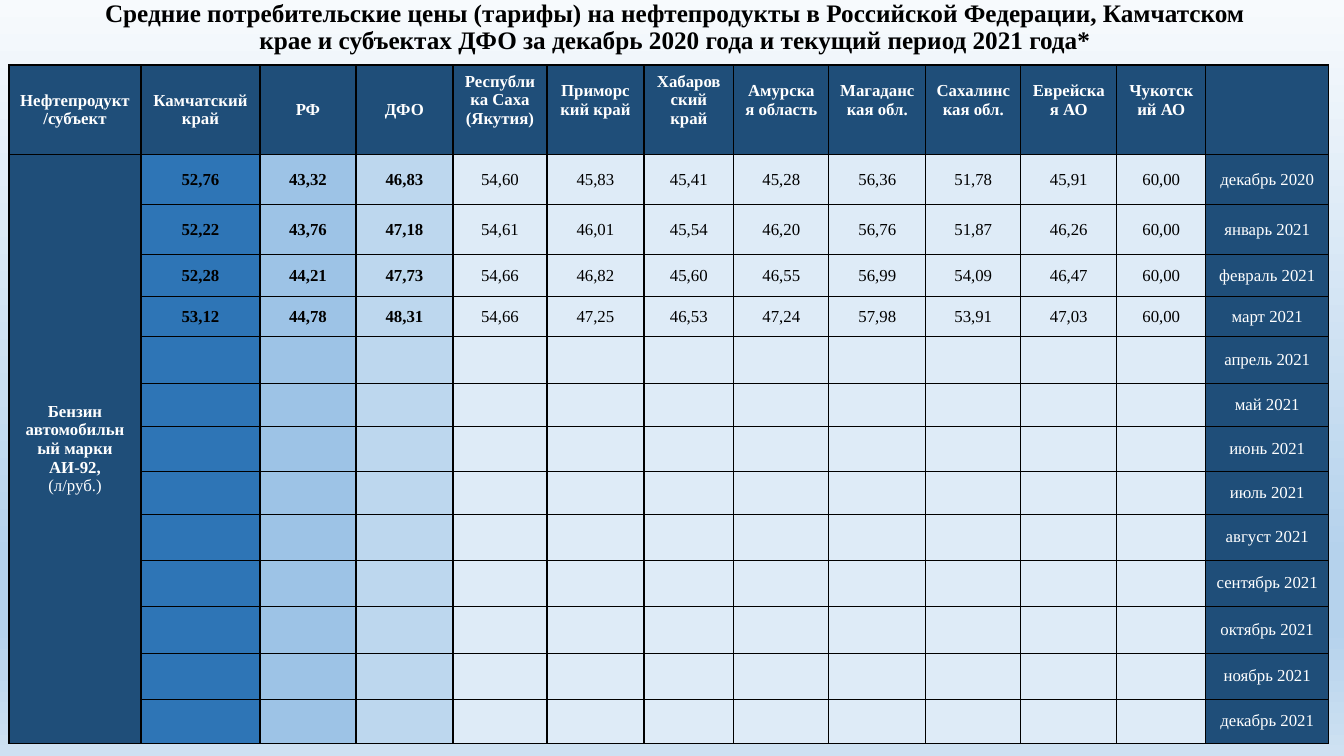
"""Build the slide with fuel prices across the Far Eastern regions."""
from lxml.etree import SubElement
from pptx import Presentation
from pptx.dml.color import RGBColor
from pptx.enum.text import MSO_ANCHOR as Anchor, PP_ALIGN as Align
from pptx.oxml import parse_xml
from pptx.oxml.ns import nsdecls, qn
from pptx.util import Pt

PX = 914400 / 100.8
BLACK = RGBColor(0x00, 0x00, 0x00)
WHITE = RGBColor(0xFF, 0xFF, 0xFF)
NAVY = RGBColor(0x1F, 0x4E, 0x79)
BLUE = RGBColor(0x2E, 0x75, 0xB6)
SKY = RGBColor(0x9D, 0xC3, 0xE6)
PALE = RGBColor(0xBD, 0xD7, 0xEE)
ICE = RGBColor(0xDE, 0xEB, 0xF7)
BACKGROUND_STOPS = [
    (0, RGBColor(0xF7, 0xFA, 0xFD)),
    (74, RGBColor(0xB5, 0xD2, 0xEC)),
    (83, RGBColor(0xB5, 0xD2, 0xEC)),
    (100, RGBColor(0xCE, 0xE1, 0xF2)),
]

TITLE = (
    "Средние потребительские цены (тарифы) на нефтепродукты в Российской Федерации, "
    "Камчатском крае и субъектах ДФО за декабрь 2020 года и текущий период 2021 года*"
)
HEADERS = [
    "Нефтепродукт/субъект", "Камчатский край", "РФ", "ДФО", "Республика Саха (Якутия)",
    "Приморский край", "Хабаровский край", "Амурская область", "Магаданская обл.",
    "Сахалинская обл.", "Еврейская АО", "Чукотский АО", "",
]
PRODUCT_LINES = [("Бензин автомобильный марки", True), ("АИ-92,", True), ("(л/руб.)", False)]
MONTHS = [
    "декабрь 2020", "январь 2021", "февраль 2021", "март 2021", "апрель 2021",
    "май 2021", "июнь 2021", "июль 2021", "август 2021", "сентябрь 2021",
    "октябрь 2021", "ноябрь 2021", "декабрь 2021",
]
PRICES = [
    "52,76 43,32 46,83 54,60 45,83 45,41 45,28 56,36 51,78 45,91 60,00".split(),
    "52,22 43,76 47,18 54,61 46,01 45,54 46,20 56,76 51,87 46,26 60,00".split(),
    "52,28 44,21 47,73 54,66 46,82 45,60 46,55 56,99 54,09 46,47 60,00".split(),
    "53,12 44,78 48,31 54,66 47,25 46,53 47,24 57,98 53,91 47,03 60,00".split(),
]
COLUMN_WIDTHS = [132, 119, 96, 97, 94, 97, 90, 95, 97, 95, 96, 89, 123]
ROW_HEIGHTS = [84, 50, 50, 42, 40, 47, 43, 45, 43, 46, 46, 47, 46, 44]
COLUMN_FILLS = [NAVY, BLUE, SKY, PALE] + [ICE] * 8 + [NAVY]


def px(length):
    return round(length * PX)


def write(paragraph, text, size, color, bold):
    paragraph.alignment = Align.CENTER
    run = paragraph.add_run()
    run.text = text
    run.font.name = "Times New Roman"
    run.font.size = Pt(size)
    run.font.bold = bold
    run.font.color.rgb = color


presentation = Presentation()
presentation.slide_width = px(1344)
presentation.slide_height = px(756)
slide = presentation.slides.add_slide(presentation.slide_layouts[6])

background = slide.background.fill
background.gradient()
background.gradient_angle = 270
stop_list = slide.element.find(".//" + qn("a:gsLst"))
for stop in list(stop_list):
    stop_list.remove(stop)
for position, color in BACKGROUND_STOPS:
    stop = SubElement(stop_list, qn("a:gs"), pos=str(position * 1000))
    SubElement(stop, qn("a:srgbClr"), val=str(color))

title = slide.shapes.add_textbox(px(93), 0, px(1164), px(55))
title.text_frame.word_wrap = True
title.text_frame.vertical_anchor = Anchor.MIDDLE
title_paragraph = title.text_frame.paragraphs[0]
title_paragraph.line_spacing = 0.9
write(title_paragraph, TITLE, 18, BLACK, True)

table = slide.shapes.add_table(
    len(ROW_HEIGHTS), len(COLUMN_WIDTHS),
    px(9), px(65), px(sum(COLUMN_WIDTHS)), px(sum(ROW_HEIGHTS)),
).table
for column, width in zip(table.columns, COLUMN_WIDTHS):
    column.width = px(width)
for row, height in zip(table.rows, ROW_HEIGHTS):
    row.height = px(height)

for row_index, row in enumerate(table.rows):
    for column_index, cell in enumerate(row.cells):
        cell.vertical_anchor = Anchor.MIDDLE
        cell.fill.solid()
        cell.fill.fore_color.rgb = COLUMN_FILLS[column_index] if row_index else NAVY
        properties = cell._tc.get_or_add_tcPr()
        for index, side in enumerate(["lnL", "lnR", "lnT", "lnB"]):
            properties.insert(index, parse_xml(
                f'<a:{side} {nsdecls("a")} w="12700"><a:solidFill>'
                f'<a:srgbClr val="{BLACK}"/></a:solidFill></a:{side}>'
            ))

for column_index, header in enumerate(HEADERS):
    cell = table.cell(0, column_index)
    if 4 <= column_index <= 11:
        cell.margin_bottom = px(24)
    if header:
        write(cell.text_frame.paragraphs[0], header, 12, WHITE, True)

for row_index, month in enumerate(MONTHS, 1):
    write(table.cell(row_index, 12).text_frame.paragraphs[0], month, 12, WHITE, False)
for row_index, prices in enumerate(PRICES, 1):
    for column_index, price in enumerate(prices, 1):
        paragraph = table.cell(row_index, column_index).text_frame.paragraphs[0]
        write(paragraph, price, 12, BLACK, column_index <= 3)

product = table.cell(1, 0)
product.merge(table.cell(len(MONTHS), 0))
for index, (text, bold) in enumerate(PRODUCT_LINES):
    frame = product.text_frame
    paragraph = frame.add_paragraph() if index else frame.paragraphs[0]
    write(paragraph, text, 12, WHITE, bold)

presentation.save("out.pptx")
